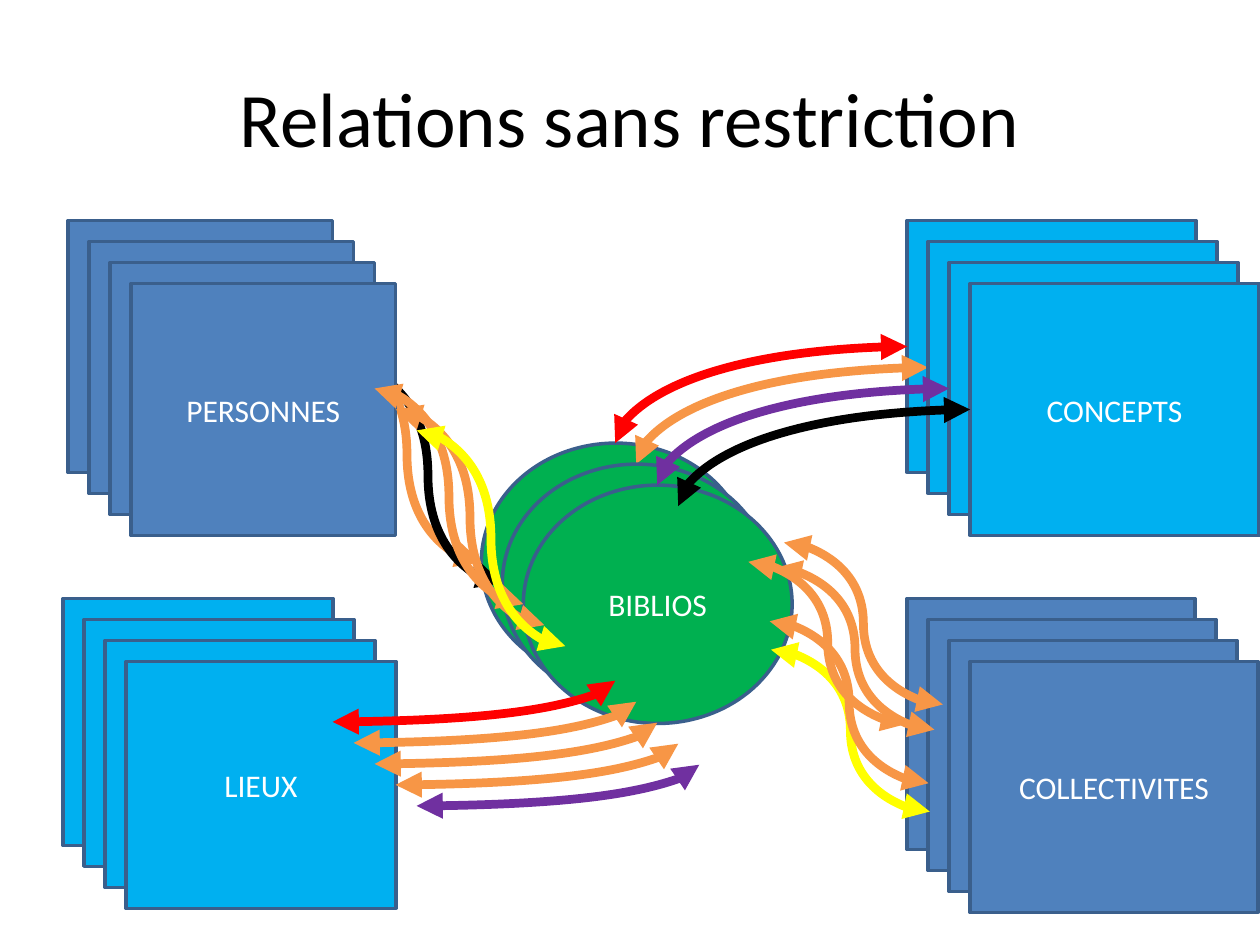
import lxml.etree
import pptx
import pptx.dml.color
import pptx.enum.shapes
import pptx.enum.text
import pptx.oxml.ns
import pptx.util

# Grid of 60 columns by 45 rows; stacked layers shift by one cell
COLUMNS, ROWS = 60, 45
CELL = pptx.util.Inches(10) / COLUMNS
SHAPES = pptx.enum.shapes.MSO_SHAPE
BLUE, CYAN, GREEN, EDGE = "4F81BD", "00B0F0", "00B050", "3A5F8C"
ORANGE, RED, PURPLE = "F79646", "FF0000", "7030A0"
YELLOW, BLACK, WHITE = "FFFF00", "000000", "FFFFFF"

# Label, preset, fill, number of layers, box of the back layer
STACKS = [
    ("PERSONNES", SHAPES.RECTANGLE, BLUE, 4, (3.24, 10.5, 12.6, 12)),
    ("CONCEPTS", SHAPES.RECTANGLE, CYAN, 4, (43.2, 10.5, 13.75, 12)),
    ("LIEUX", SHAPES.RECTANGLE, CYAN, 4, (3, 28.5, 12.85, 11.76)),
    ("COLLECTIVITES", SHAPES.RECTANGLE, BLUE, 4, (43.2, 28.5, 13.7, 11.95)),
    ("BIBLIOS", SHAPES.OVAL, GREEN, 3, (22.92, 21.1, 12.8, 11.35)),
]

# Curve preset, start and end of the first link, colours of the series
PERSON_LINKS = ("curvedConnector3", (15.84, 16.5), (22.92, 26.77),
                [ORANGE, BLACK, ORANGE, ORANGE, YELLOW])
CONCEPT_LINKS = ("curvedConnector2", (43.2, 16.5), (29.3, 21.1),
                 [RED, ORANGE, PURPLE, BLACK])
PLACE_LINKS = ("curvedConnector2", (15.84, 34.38), (29.3, 32.42),
               [RED, ORANGE, ORANGE, ORANGE, PURPLE])

# Ends at COLLECTIVITES; every link spans the same distance
GROUP_SPAN = (7.56, 7.71)
GROUP_LINKS = [
    (44.5, 34.75, ORANGE), (44.9, 33.55, ORANGE), (44.28, 38.65, YELLOW),
    (43.2, 34.47, ORANGE), (44.22, 37.3, ORANGE),
]


def color(value):
    return pptx.dml.color.RGBColor.from_string(value)


def cells(*values):
    return [pptx.util.Emu(round(value * CELL)) for value in values]


def write(shape, text, size, ink):
    frame = shape.text_frame
    frame.word_wrap = True
    frame.vertical_anchor = pptx.enum.text.MSO_ANCHOR.MIDDLE
    para = frame.paragraphs[0]
    para.alignment = pptx.enum.text.PP_ALIGN.CENTER
    span = para.add_run()
    span.text = text
    formats = {"name": "Calibri", "size": pptx.util.Pt(size)}
    for name, value in formats.items():
        setattr(span.font, name, value)
    span.font.color.rgb = color(ink)


def add_title(page, box):
    write(page.shapes.add_textbox(*cells(*box)), "Relations sans restriction", 44, BLACK)


def add_layer(page, stack, layer):
    label, preset, fill, count, (left, top, width, height) = stack
    shape = page.shapes.add_shape(
        preset, *cells(left + layer, top + layer, width, height))
    shape.shadow.inherit = False
    shape.fill.solid()
    shape.fill.fore_color.rgb = color(fill)
    shape.line.color.rgb = color(EDGE)
    shape.line.width = pptx.util.Pt(2)
    # The two front layers carry the label
    if layer >= count - 2:
        write(shape, label, 18, WHITE)


def add_link(page, preset, start, end, ink):
    link = page.shapes.add_connector(
        pptx.enum.shapes.MSO_CONNECTOR.CURVE, *cells(*start, *end))
    link.line.color.rgb = color(ink)
    link.line.width = pptx.util.Pt(5)
    qn = pptx.oxml.ns.qn
    properties = link._element.spPr
    properties.find(qn("a:prstGeom")).set("prst", preset)
    for tip in ("a:headEnd", "a:tailEnd"):
        lxml.etree.SubElement(properties.find(qn("a:ln")), qn(tip), type="triangle")
    lxml.etree.SubElement(properties, qn("a:effectLst"))


def add_series(page, series, first, last):
    preset, start, end, inks = series
    for step in range(first, last):
        add_link(page, preset, [value + step for value in start],
                 [value + step for value in end], inks[step])


def add_group_links(page):
    for column, row, ink in GROUP_LINKS:
        end = (column - GROUP_SPAN[0], row - GROUP_SPAN[1])
        add_link(page, "curvedConnector3", (column, row), end, ink)


def main():
    deck = pptx.Presentation()
    deck.slide_width, deck.slide_height = cells(COLUMNS, ROWS)
    page = deck.slides.add_slide(deck.slide_layouts[6])
    add_title(page, (3, 1.8, 54, 7.5))

    # Back layers and the links that pass behind the front layers
    for stack in STACKS:
        add_layer(page, stack, 0)
    add_series(page, PERSON_LINKS, 0, 2)
    add_series(page, CONCEPT_LINKS, 0, 2)

    # Front layers
    for stack in STACKS:
        for layer in range(1, stack[3]):
            add_layer(page, stack, layer)

    # Links on top
    add_series(page, CONCEPT_LINKS, 2, 4)
    add_series(page, PLACE_LINKS, 0, 5)
    add_series(page, PERSON_LINKS, 2, 5)
    add_group_links(page)
    deck.save("out.pptx")


if __name__ == "__main__":
    main()
